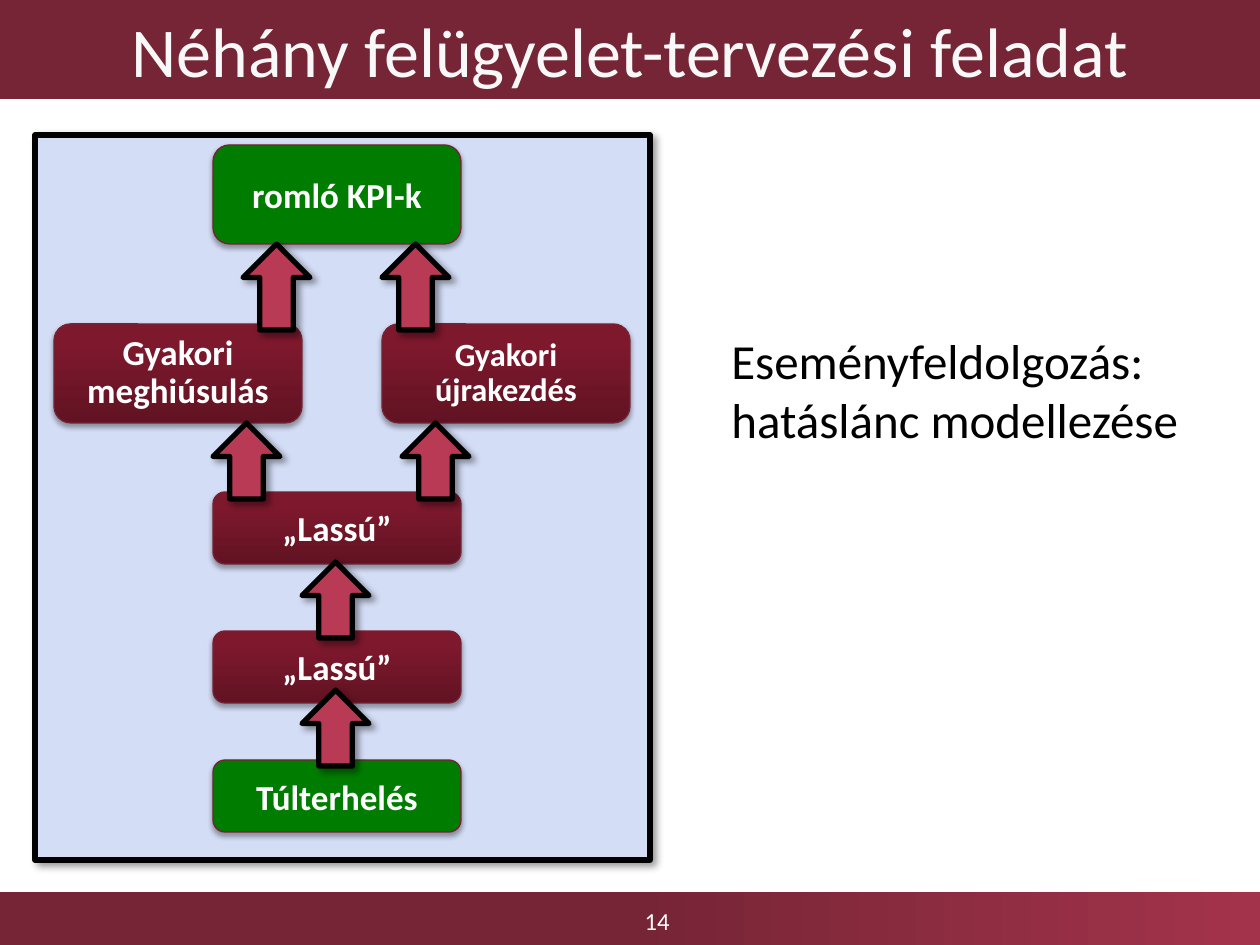
from pptx import Presentation
from pptx.dml.color import RGBColor
from pptx.enum.shapes import MSO_SHAPE as Preset
from pptx.enum.text import MSO_ANCHOR as Anchor, MSO_AUTO_SIZE as AutoSize, PP_ALIGN as Align
from pptx.oxml import parse_xml
from pptx.oxml.ns import nsdecls, qn
from pptx.util import Emu, Pt

EMU_PER_PX = 914400 / 126
FONT = "Calibri"

# Gradients: stops as (percent, colour), then the angle in degrees
BAR_GRADIENT = ([(0, "762536"), (50, "762536"), (100, "A3334B")], 0)
BOX_GRADIENT = ([(0, "611323"), (80, "7E182D"), (100, "81162D")], 270)
GREEN = "007D00"

# Shadows: opacity in percent, blur and distance in points, angle in degrees
SOFT_SHADOW = (35, 3.1, 1.8, 90)
DEEP_SHADOW = (40, 4, 3, 45)

# Chain of effects, from cause to result: text, left, top, height, fill, format
NARROW = {"size": 20}
TIGHT = {"size": 20, "spacing": 0.9}
BOX_WIDTH = 248
BOXES = [
    ("Túlterhelés", 213, 760, 72, GREEN, NARROW),
    ("„Lassú”", 213, 631, 72, BOX_GRADIENT, NARROW),
    ("„Lassú”", 213, 492, 72, BOX_GRADIENT, NARROW),
    ("Gyakori újrakezdés", 382, 324, 99, BOX_GRADIENT, {**TIGHT, "size": 18.5}),
    ("Gyakori meghiúsulás", 54, 324, 99, BOX_GRADIENT, TIGHT),
    ("romló KPI-k", 213, 145, 99, GREEN, NARROW),
]

# Arrows: left, top, height
ARROW_WIDTH = 67
ARROWS = [(302, 690, 76), (302, 562, 76), (213, 423, 76),
          (402, 423, 76), (382, 244, 86), (243, 244, 86)]


def px(*lengths):
    return [Emu(round(length * EMU_PER_PX)) for length in lengths]


def colour(code):
    return RGBColor.from_string(code)


def set_fill(shape, fill):
    if isinstance(fill, str):
        shape.fill.solid()
        shape.fill.fore_color.rgb = colour(fill)
        return
    stops, angle = fill
    shape.fill.gradient()
    stop_xml = "".join(
        f'<a:gs pos="{percent * 1000}"><a:srgbClr val="{code}"/></a:gs>'
        for percent, code in stops)
    gradient = parse_xml(
        f'<a:gradFill {nsdecls("a")} rotWithShape="1"><a:gsLst>{stop_xml}</a:gsLst>'
        f'<a:lin ang="{angle * 60000}" scaled="0"/></a:gradFill>')
    properties = shape._element.spPr
    properties.replace(properties.find(qn("a:gradFill")), gradient)


def set_shadow(shape, shadow):
    shape.shadow.inherit = False
    if shadow:
        opacity, blur, distance, angle = shadow
        effects = shape._element.spPr.find(qn("a:effectLst"))
        effects.append(parse_xml(
            f'<a:outerShdw {nsdecls("a")} blurRad="{Pt(blur)}" dist="{Pt(distance)}" '
            f'dir="{angle * 60000}" rotWithShape="0"><a:srgbClr val="000000">'
            f'<a:alpha val="{opacity * 1000}"/></a:srgbClr></a:outerShdw>'))


def add_block(page, preset, place, fill, line=None, shadow=None):
    shape = page.shapes.add_shape(preset, *px(*place))
    set_fill(shape, fill)
    if line:
        code, width = line
        shape.line.color.rgb = colour(code)
        shape.line.width = Pt(width)
    else:
        shape.line.fill.background()
    set_shadow(shape, shadow)
    return shape


def write(box, lines, size, code, bold=False, align=Align.CENTER,
          anchor=Anchor.MIDDLE, spacing=None, wrap=True, fit=AutoSize.NONE):
    frame = box.text_frame
    frame.text = "\n".join(lines)
    frame_format = {"word_wrap": wrap, "auto_size": fit, "vertical_anchor": anchor}
    for name, value in frame_format.items():
        setattr(frame, name, value)
    font_format = {"name": FONT, "size": Pt(size), "bold": bold}
    for para in frame.paragraphs:
        para.alignment = align
        para.line_spacing = spacing
        for span in para.runs:
            for name, value in font_format.items():
                setattr(span.font, name, value)
            span.font.color.rgb = colour(code)


def add_title(page, text):
    title = page.shapes.title
    title.left, title.top, title.width, title.height = px(0, 0, 1260, 99)
    set_fill(title, "762536")
    write(title, [text], 40, "F8F8F8")


def add_text(page, place, lines, size, code, **options):
    box = page.shapes.add_textbox(*px(*place))
    write(box, lines, size, code, **options)


def add_box(page, text, left, top, height, fill, text_format):
    box = add_block(page, Preset.ROUNDED_RECTANGLE, (left, top, BOX_WIDTH, height),
                    fill, ("752234", 0.75), SOFT_SHADOW)
    write(box, [text], code="FFFFFF", bold=True, **text_format)


def add_arrow(page, left, top, height):
    arrow = add_block(page, Preset.DOWN_ARROW, (left, top, ARROW_WIDTH, height),
                      "B83A55", ("000000", 3), DEEP_SHADOW)
    arrow.rotation = 180


def main():
    deck = Presentation()
    deck.slide_width, deck.slide_height = px(1260, 945)
    page = deck.slides.add_slide(deck.slide_layouts[5])

    # Title and footer bars
    add_title(page, "Néhány felügyelet-tervezési feladat")
    add_block(page, Preset.RECTANGLE, (0, 892, 1260, 53), BAR_GRADIENT)
    add_text(page, (452, 896, 410, 49), ["14"], 14, "FFFFFF")

    # Chain of effects on its panel
    add_block(page, Preset.RECTANGLE, (35, 135, 615, 725), "D4DDF6",
              ("000000", 3), DEEP_SHADOW)
    for box in BOXES:
        add_box(page, *box)
    for arrow in ARROWS:
        add_arrow(page, *arrow)

    # Explanation beside the panel
    add_text(page, (719, 324, 476, 131),
             ["Eseményfeldolgozás:", "hatáslánc modellezése"], 28, "000000",
             align=Align.LEFT, anchor=Anchor.TOP, wrap=False,
             fit=AutoSize.SHAPE_TO_FIT_TEXT)

    deck.save("out.pptx")


if __name__ == "__main__":
    main()
